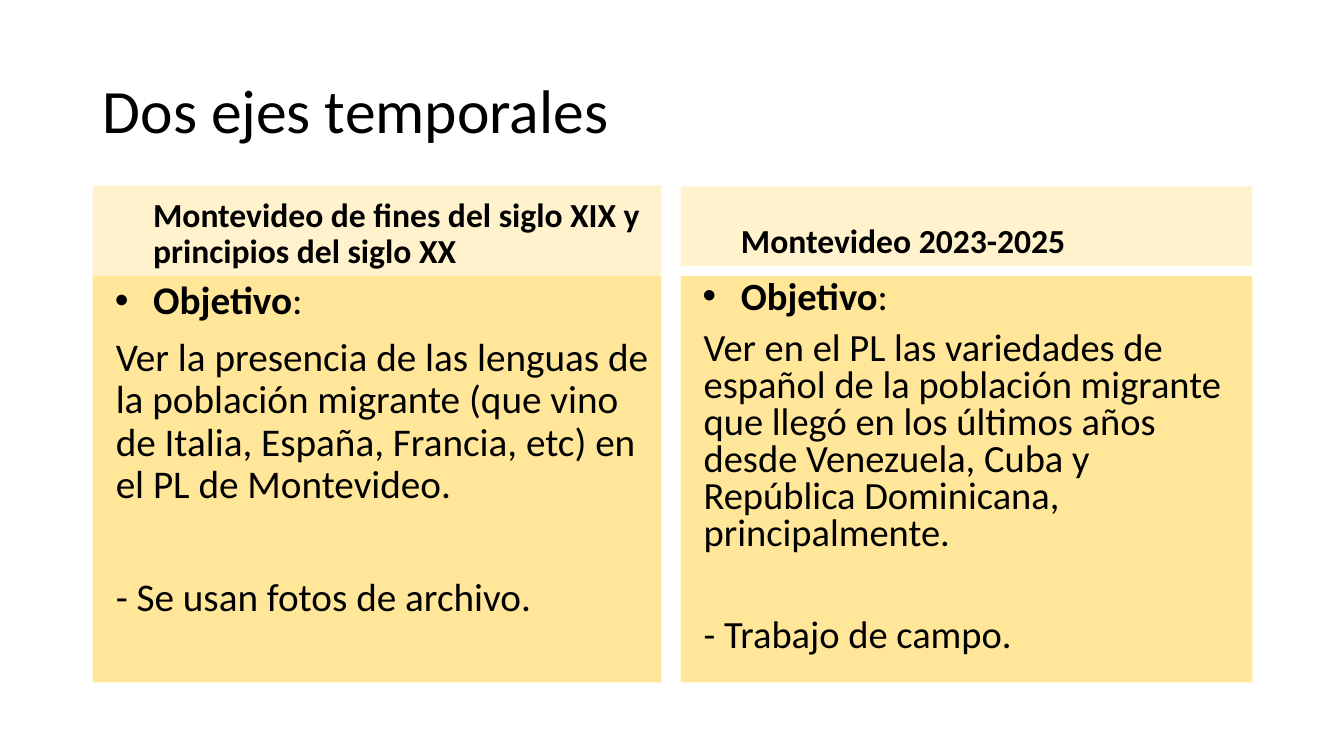
from lxml import etree
from pptx import Presentation
from pptx.dml.color import RGBColor
from pptx.enum.shapes import MSO_SHAPE
from pptx.enum.text import MSO_ANCHOR, PP_ALIGN
from pptx.oxml.ns import qn
from pptx.util import Inches, Pt

RECT = MSO_SHAPE.RECTANGLE
TOP, MIDDLE, BOTTOM = MSO_ANCHOR.TOP, MSO_ANCHOR.MIDDLE, MSO_ANCHOR.BOTTOM
LEFT = PP_ALIGN.LEFT

BLACK = RGBColor(0x00, 0x00, 0x00)
CREAM = RGBColor(0xFF, 0xF2, 0xCC)
AMBER = RGBColor(0xFF, 0xE6, 0x99)

FONT = "Calibri"
WIDE, HIGH = Inches(13.33), Inches(7.5)
COL, ROW = WIDE / 100, HIGH / 100  # grid of 100 columns and 100 rows
LINE = 1.22  # line height of the font, as a share of its size
GAP = 10  # points before a paragraph

BODY_TOP, BODY_ROWS = 36.53, 53.73
AXES = [
    dict(left=6.9, cols=42.31, top=24.53, rows=12, size=28, lead=0.9,
         head="Montevideo de fines del siglo XIX y principios del siglo XX",
         goal="Ver la presencia de las lenguas de la población migrante "
              "(que vino de Italia, España, Francia, etc) en el PL de "
              "Montevideo.",
         note="- Se usan fotos de archivo."),
    dict(left=50.64, cols=42.54, top=24.67, rows=10.53, size=27.5, lead=0.8,
         head="Montevideo 2023-2025",
         goal="Ver en el PL las variedades de español de la población "
              "migrante que llegó en los últimos años desde Venezuela, Cuba "
              "y República Dominicana, principalmente.",
         note="- Trabajo de campo."),
]


def add_box(slide, box, fill=None, anchor=TOP):
    """Add a text area on the grid and return its text frame."""
    left, top, cols, rows = box
    place = [round(n) for n in (left * COL, top * ROW, cols * COL, rows * ROW)]
    if fill is None:
        shape = slide.shapes.add_textbox(*place)
    else:
        shape = slide.shapes.add_shape(RECT, *place)
        shape.shadow.inherit = False
        shape.fill.solid()
        shape.fill.fore_color.rgb = fill
        shape.line.fill.background()
    frame = shape.text_frame
    frame.word_wrap = True
    frame.vertical_anchor = anchor
    return frame


def add_text(frame, text, size, bold=False, lead=0.9, gap=GAP, margin=0,
             bullet=False, tail=""):
    """Add a paragraph; tail is a regular run after the text."""
    para = frame.paragraphs[0]
    if para.runs:
        para = frame.add_paragraph()
    para.alignment = LEFT
    para.line_spacing = lead
    para.space_before = Pt(gap)
    props = para._p.get_or_add_pPr()
    props.set("marL", str(Inches(margin)))
    props.set("indent", str(Inches(-0.38 if bullet else 0)))
    if bullet:
        etree.SubElement(props, qn("a:buFont")).set("typeface", "Arial")
        etree.SubElement(props, qn("a:buChar")).set("char", "•")
    else:
        etree.SubElement(props, qn("a:buNone"))
    for part, heavy in ((text, bold), (tail, False)):
        if part:
            run = para.add_run()
            run.text = part
            font = run.font
            font.name, font.size, font.bold = FONT, Pt(size), heavy
            font.color.rgb = BLACK


def add_title(slide, box, text):
    add_text(add_box(slide, box, anchor=MIDDLE), text, 44, gap=0)


def add_head(slide, box, text):
    frame = add_box(slide, box, CREAM, BOTTOM)
    add_text(frame, text, 24, bold=True, margin=0.5)


def add_body(slide, box, goal, note, size, lead):
    """Add the goal, then the note one blank line below it."""
    frame = add_box(slide, box, AMBER)
    add_text(frame, "Objetivo", size, bold=True, lead=lead, margin=0.5,
             bullet=True, tail=":")
    add_text(frame, goal, size, lead=lead, margin=0.13)
    skip = round(size * LINE * lead + 2 * GAP, 1)
    add_text(frame, note, size, lead=lead, gap=skip, margin=0.13)


def main():
    deck = Presentation()
    deck.slide_width, deck.slide_height = WIDE, HIGH
    slide = deck.slides.add_slide(deck.slide_layouts[6])
    add_title(slide, (6.9, 5.33, 86.27, 19.33), "Dos ejes temporales")
    for axis in AXES:
        left, cols = axis["left"], axis["cols"]
        add_head(slide, (left, axis["top"], cols, axis["rows"]), axis["head"])
        add_body(slide, (left, BODY_TOP, cols, BODY_ROWS), axis["goal"],
                 axis["note"], axis["size"], axis["lead"])
    deck.save("out.pptx")


if __name__ == "__main__":
    main()
